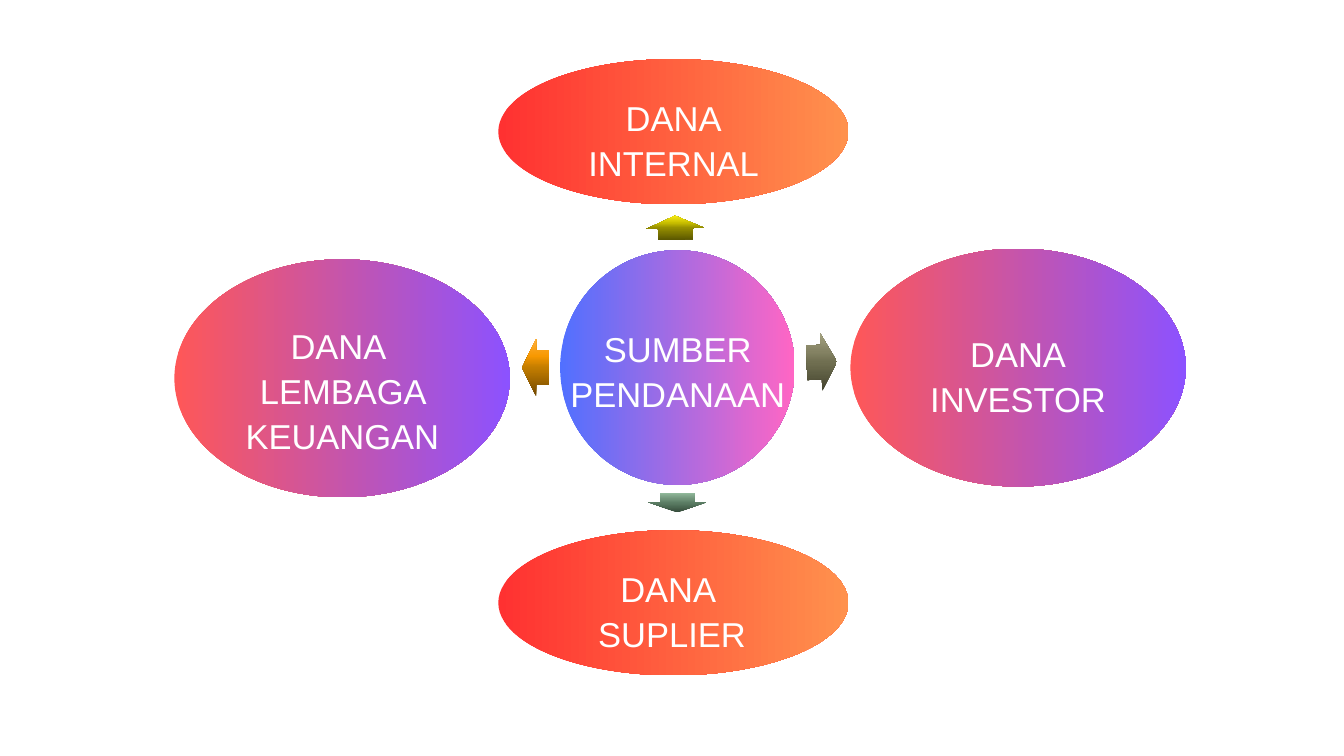
from dataclasses import dataclass

from lxml import etree
from pptx import Presentation
from pptx.dml.color import RGBColor
from pptx.enum.shapes import MSO_SHAPE
from pptx.enum.text import MSO_ANCHOR, MSO_AUTO_SIZE, PP_ALIGN
from pptx.oxml.ns import qn
from pptx.util import Inches, Pt

OVAL = MSO_SHAPE.OVAL
ARROW = MSO_SHAPE.RIGHT_ARROW
CENTER = PP_ALIGN.CENTER
TOP = MSO_ANCHOR.TOP
GROW = MSO_AUTO_SIZE.SHAPE_TO_FIT_TEXT


@dataclass(frozen=True)
class Theme:
    font: str = "Arial"
    size: float = 37
    line_spacing: float = 1.08
    text: str = "FFFFFF"
    hub: tuple = ("5170FF", "FF66C4")
    warm: tuple = ("FF3131", "FF914D")
    violet: tuple = ("FF5757", "8C52FF")
    yellow: tuple = ("585400", "968F00", "C9BF00", "FAED16")
    stone: tuple = ("42422D", "706F51", "868465", "A6A482")
    green: tuple = ("354B3A", "5C7E65", "72957B", "90B89A")
    orange: tuple = ("724800", "C37D00", "F79800", "FFB243")


THEME = Theme()
OVAL_STOPS = (0, 100)
ARROW_STOPS = (0, 50, 70, 100)
ARROW_SPAN = 0.86


def fill_gradient(shape, colors, stops, angle=0):
    """Fill with a linear gradient; the angle runs counter-clockwise."""
    shape.fill.gradient()
    shape.fill.gradient_angle = angle
    stop_list = next(shape.element.iter(qn("a:gsLst")))
    stop_list.clear()
    for color, stop in zip(colors, stops):
        item = etree.SubElement(stop_list, qn("a:gs"), pos=str(stop * 1000))
        etree.SubElement(item, qn("a:srgbClr"), val=color)


def add_centered(page, kind, center, size):
    """Add a plain shape around a centre point."""
    (x, y), (width, height) = center, size
    shape = page.shapes.add_shape(
        kind, Inches(x - width / 2), Inches(y - height / 2),
        Inches(width), Inches(height))
    shape.shadow.inherit = False
    shape.line.fill.background()
    return shape


def add_oval(page, center, size, colors):
    fill_gradient(add_centered(page, OVAL, center, size), colors, OVAL_STOPS)


def add_arrow(page, center, length, rotation, colors):
    """Add a block arrow, always lit from the top of the page."""
    arrow = add_centered(page, ARROW, center, (length, ARROW_SPAN))
    arrow.adjustments[0] = 0.6
    arrow.adjustments[1] = 0.52
    arrow.rotation = rotation
    fill_gradient(arrow, colors, ARROW_STOPS, (rotation + 90) % 360)


def add_text(page, text, *, left, top, width, height, size=THEME.size,
             color=THEME.text, align=CENTER):
    """Add a text box with one paragraph per line of text."""
    box = page.shapes.add_textbox(
        Inches(left), Inches(top), Inches(width), Inches(height))
    frame = box.text_frame
    frame.word_wrap = True
    frame.auto_size = GROW
    frame.vertical_anchor = TOP
    frame.margin_left = frame.margin_right = 0
    frame.margin_top = frame.margin_bottom = 0
    frame.text = text
    for para in frame.paragraphs:
        para.alignment = align
        para.line_spacing = THEME.line_spacing
        for span in para.runs:
            span.font.name = THEME.font
            span.font.size = Pt(size)
            span.font.color.rgb = RGBColor.from_string(color)


def main():
    deck = Presentation()
    deck.slide_width = Inches(20)
    deck.slide_height = Inches(11.25)
    page = deck.slides.add_slide(deck.slide_layouts[6])

    # Hub and the four sources of funds
    flat, round_size = (5.21, 2.16), (4.99, 3.54)
    add_oval(page, (10.08, 5.47), (3.49, 3.49), THEME.hub)
    add_oval(page, (10.02, 1.96), flat, THEME.warm)
    add_oval(page, (5.09, 5.63), round_size, THEME.violet)
    add_oval(page, (15.15, 5.47), round_size, THEME.violet)
    add_oval(page, (10.02, 8.97), flat, THEME.warm)

    # Arrows from the hub: up, right, down, left
    add_arrow(page, (10.05, 3.39), 0.36, 269, THEME.yellow)
    add_arrow(page, (12.23, 5.39), 0.45, 357.8, THEME.stone)
    add_arrow(page, (10.08, 7.48), 0.29, 90, THEME.green)
    add_arrow(page, (7.97, 5.47), 0.4, 180, THEME.orange)

    # Labels
    add_text(page, "SUMBER PENDANAAN",
             left=8.4, top=4.83, width=3.37, height=1.14)
    add_text(page, "DANA\nINTERNAL",
             left=8.21, top=1.4, width=3.63, height=1.14)
    add_text(page, "DANA \nLEMBAGA KEUANGAN",
             left=3.56, top=4.79, width=3.07, height=1.7)
    add_text(page, "DANA\nINVESTOR",
             left=13.77, top=4.91, width=2.76, height=1.14)
    add_text(page, "DANA \nSUPLIER",
             left=8.54, top=8.41, width=2.92, height=1.14)

    deck.save("out.pptx")


if __name__ == "__main__":
    main()
